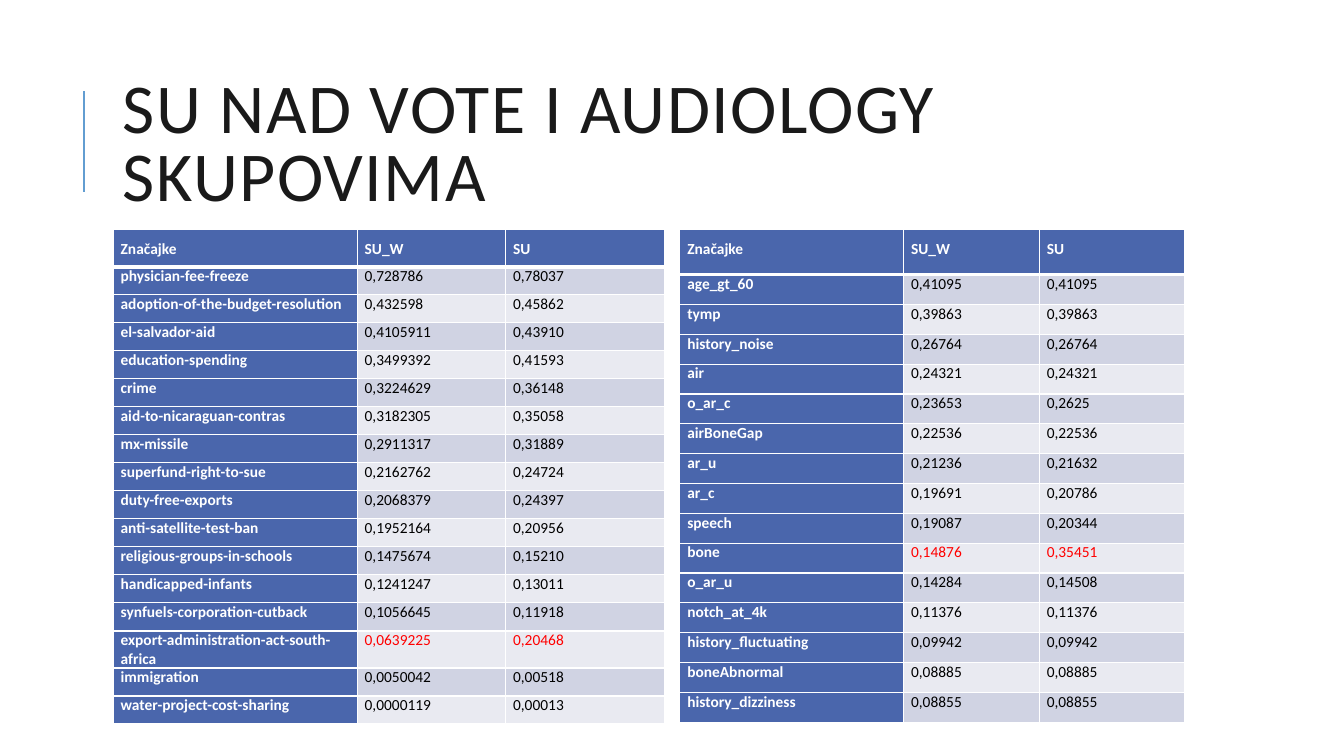
from dataclasses import dataclass
from typing import NamedTuple

from lxml.etree import SubElement
from pptx import Presentation
from pptx.dml.color import RGBColor
from pptx.enum.shapes import MSO_CONNECTOR
from pptx.enum.text import MSO_ANCHOR, PP_ALIGN
from pptx.oxml.ns import qn
from pptx.slide import Slide
from pptx.table import _Cell
from pptx.text.text import TextFrame
from pptx.util import Cm, Pt


@dataclass(frozen=True)
class Theme:
    font: str = "Calibri"
    title_size: float = 50
    table_size: float = 11
    title: str = "1A1A1A"
    accent: str = "629DD1"
    header: str = "4A66AC"
    bands: tuple[str, str] = ("D0D3E3", "E9EAF1")
    light: str = "FFFFFF"
    value: str = "000000"
    flagged: str = "FF0000"


class Feature(NamedTuple):
    name: str
    su_w: str
    su: str
    flagged: bool = False


@dataclass(frozen=True)
class Ranking:
    """One table of features; lengths are in centimetres."""
    left: float
    widths: tuple[float, float, float]
    height: float
    header_height: float
    features: tuple[Feature, ...]


THEME = Theme()
HEADINGS = ("Značajke", "SU_W", "SU")
RANKING_TOP = 5.79

VOTE = Ranking(2.85, (6.15, 3.74, 4.0), 12.23, 0.93, (
    Feature("physician-fee-freeze", "0,728786", "0,78037"),
    Feature("adoption-of-the-budget-resolution", "0,432598", "0,45862"),
    Feature("el-salvador-aid", "0,4105911", "0,43910"),
    Feature("education-spending", "0,3499392", "0,41593"),
    Feature("crime", "0,3224629", "0,36148"),
    Feature("aid-to-nicaraguan-contras", "0,3182305", "0,35058"),
    Feature("mx-missile", "0,2911317", "0,31889"),
    Feature("superfund-right-to-sue", "0,2162762", "0,24724"),
    Feature("duty-free-exports", "0,2068379", "0,24397"),
    Feature("anti-satellite-test-ban", "0,1952164", "0,20956"),
    Feature("religious-groups-in-schools", "0,1475674", "0,15210"),
    Feature("handicapped-infants", "0,1241247", "0,13011"),
    Feature("synfuels-corporation-cutback", "0,1056645", "0,11918"),
    Feature("export-administration-act-south-africa", "0,0639225", "0,20468", True),
    Feature("immigration", "0,0050042", "0,00518"),
    Feature("water-project-cost-sharing", "0,0000119", "0,00013"),
))

AUDIOLOGY = Ranking(17.13, (5.64, 3.42, 3.66), 12.42, 1.13, (
    Feature("age_gt_60", "0,41095", "0,41095"),
    Feature("tymp", "0,39863", "0,39863"),
    Feature("history_noise", "0,26764", "0,26764"),
    Feature("air", "0,24321", "0,24321"),
    Feature("o_ar_c", "0,23653", "0,2625"),
    Feature("airBoneGap", "0,22536", "0,22536"),
    Feature("ar_u", "0,21236", "0,21632"),
    Feature("ar_c", "0,19691", "0,20786"),
    Feature("speech", "0,19087", "0,20344"),
    Feature("bone", "0,14876", "0,35451", True),
    Feature("o_ar_u", "0,14284", "0,14508"),
    Feature("notch_at_4k", "0,11376", "0,11376"),
    Feature("history_fluctuating", "0,09942", "0,09942"),
    Feature("boneAbnormal", "0,08885", "0,08885"),
    Feature("history_dizziness", "0,08855", "0,08855"),
))


def write(frame: TextFrame, text: str, *, size: float, color: str,
          bold: bool = False, align: PP_ALIGN = PP_ALIGN.LEFT,
          line_spacing: float = 1.0, tracking: float = 0) -> None:
    """Fill the frame with one formatted paragraph; tracking is in points."""
    paragraph = frame.paragraphs[0]
    paragraph.alignment = align
    paragraph.line_spacing = line_spacing
    run = paragraph.add_run()
    run.text = text
    run.font.name = THEME.font
    run.font.size = Pt(size)
    run.font.bold = bold
    run.font.color.rgb = RGBColor.from_string(color)
    if tracking:
        run.font._element.set("spc", str(round(tracking * 100)))


def add_title(slide: Slide, text: str) -> None:
    rule = slide.shapes.add_connector(
        MSO_CONNECTOR.STRAIGHT, Cm(2.12), Cm(4.83), Cm(2.12), Cm(2.29))
    rule.line.color.rgb = RGBColor.from_string(THEME.accent)
    rule.line.width = Pt(1.5)
    SubElement(rule._element.spPr, qn("a:effectLst"))

    frame = slide.shapes.add_textbox(Cm(2.85), Cm(1.63), Cm(27), Cm(4.17)).text_frame
    frame.word_wrap = True
    frame.vertical_anchor = MSO_ANCHOR.MIDDLE
    write(frame, text, size=THEME.title_size, color=THEME.title,
          line_spacing=0.8, tracking=1)


def set_borders(cell: _Cell, is_header: bool) -> None:
    """Draw white edges; a body cell's top edge is the bottom of the cell above."""
    widths = {"lnL": 1, "lnR": 1, "lnT": 1, "lnB": 3} if is_header else {
        "lnL": 1, "lnR": 1, "lnB": 1}
    properties = cell._tc.get_or_add_tcPr()
    for edge, width in widths.items():
        line = SubElement(properties, qn(f"a:{edge}"), w=str(Pt(width)))
        fill = SubElement(line, qn("a:solidFill"))
        SubElement(fill, qn("a:srgbClr"), val=THEME.light)


def fill_cell(cell: _Cell, text: str, *, background: str, color: str,
              bold: bool, is_header: bool) -> None:
    cell.margin_left = cell.margin_right = Cm(0.19)
    cell.margin_top = cell.margin_bottom = 0
    cell.vertical_anchor = MSO_ANCHOR.TOP
    set_borders(cell, is_header)
    cell.fill.solid()
    cell.fill.fore_color.rgb = RGBColor.from_string(background)
    write(cell.text_frame, text, size=THEME.table_size, color=color, bold=bold,
          align=PP_ALIGN.JUSTIFY, line_spacing=1.5 if is_header else 1.0)


def add_ranking(slide: Slide, ranking: Ranking) -> None:
    count = len(ranking.features)
    table = slide.shapes.add_table(
        count + 1, len(HEADINGS), Cm(ranking.left), Cm(RANKING_TOP),
        Cm(sum(ranking.widths)), Cm(ranking.height)).table
    for column, width in zip(table.columns, ranking.widths):
        column.width = Cm(width)
    feature_height = (ranking.height - ranking.header_height) / count
    for index, row in enumerate(table.rows):
        row.height = Cm(feature_height if index else ranking.header_height)

    for column, heading in enumerate(HEADINGS):
        fill_cell(table.cell(0, column), heading, background=THEME.header,
                  color=THEME.light, bold=True, is_header=True)
    for index, feature in enumerate(ranking.features):
        fill_cell(table.cell(index + 1, 0), feature.name, background=THEME.header,
                  color=THEME.light, bold=True, is_header=False)
        for column, score in enumerate((feature.su_w, feature.su), start=1):
            fill_cell(table.cell(index + 1, column), score,
                      background=THEME.bands[index % 2],
                      color=THEME.flagged if feature.flagged else THEME.value,
                      bold=False, is_header=False)


def main() -> None:
    presentation = Presentation()
    presentation.slide_width = Cm(33.87)
    presentation.slide_height = Cm(19.05)
    slide = presentation.slides.add_slide(presentation.slide_layouts[6])
    add_title(slide, "SU NAD VOTE I AUDIOLOGY SKUPOVIMA")
    for ranking in (VOTE, AUDIOLOGY):
        add_ranking(slide, ranking)
    presentation.save("out.pptx")


if __name__ == "__main__":
    main()
